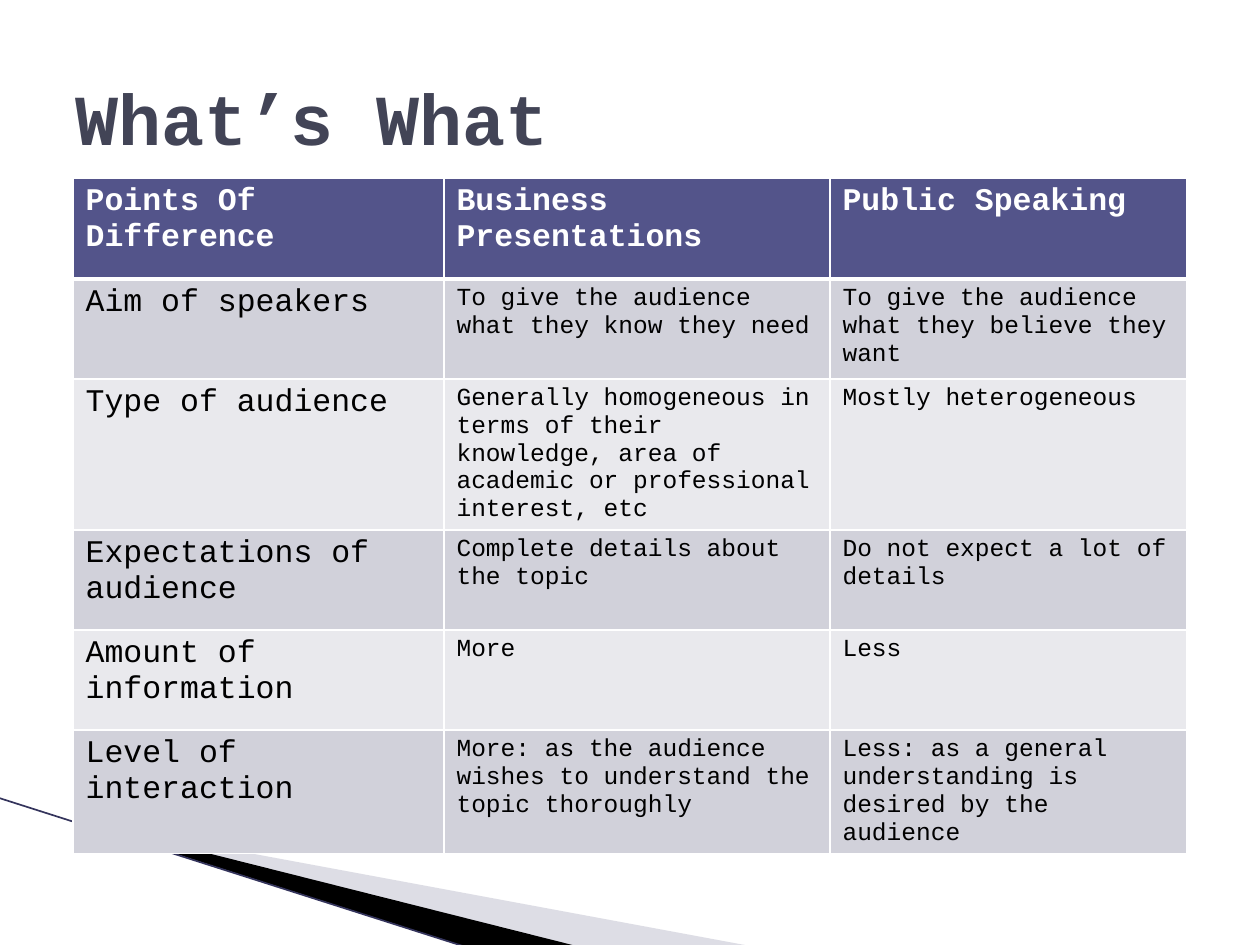
from lxml import etree
from pptx import Presentation
from pptx.dml.color import RGBColor
from pptx.enum.shapes import MSO_CONNECTOR
from pptx.enum.text import MSO_ANCHOR
from pptx.oxml.ns import qn
from pptx.util import Pt

PX = 914400 / 126
STRAIGHT = MSO_CONNECTOR.STRAIGHT
MIDDLE = MSO_ANCHOR.MIDDLE
FONT = "Courier New"
COLORS = {
    "title": "424456", "header": "53548A", "odd": "D1D1DA", "even": "E9E9ED",
    "white": "FFFFFF", "black": "000000", "wedge": "AAAABF", "edge": "34345C",
}


def px(length):
    return round(length * PX)


def rgb(name):
    return RGBColor.from_string(COLORS[name])


def write(frame, text, size=14, color="black", bold=False):
    frame.word_wrap = True
    paragraph = frame.paragraphs[0]
    run = paragraph.add_run()
    run.text = text
    run.font.name = FONT
    run.font.size = Pt(size)
    run.font.bold = bold
    run.font.color.rgb = rgb(color)


class SlideBuilder:
    def __init__(self, slide):
        self.slide = slide

    def wedge(self, frame, points, color, opacity=100):
        outline = self.slide.shapes.build_freeform(*points[0], scale=PX)
        outline.add_line_segments(points[1:], close=True)
        shape = outline.convert_to_shape()
        self.reframe(shape, frame, points)
        shape.shadow.inherit = False
        shape.fill.solid()
        shape.fill.fore_color.rgb = rgb(color)
        shape.line.fill.background()
        if opacity < 100:
            fill_color = shape.fill._xPr.find(qn("a:solidFill"))[0]
            etree.SubElement(fill_color, qn("a:alpha"), val=str(opacity * 1000))

    def reframe(self, shape, frame, points):
        """Give the shape a frame that its outline may reach beyond."""
        left, top, width, height = frame
        shape.left, shape.top, shape.width, shape.height = map(px, frame)
        track = next(shape._element.iter(qn("a:path")))
        track.set("w", str(width))
        track.set("h", str(height))
        for spot, (x, y) in zip(track.iter(qn("a:pt")), points):
            spot.set("x", str(x - left))
            spot.set("y", str(y - top))

    def line(self, start, end, color, width):
        connector = self.slide.shapes.add_connector(
            STRAIGHT, *map(px, start), *map(px, end))
        connector.line.color.rgb = rgb(color)
        connector.line.width = Pt(width)
        etree.SubElement(connector._element.spPr, qn("a:effectLst"))

    def title(self, left, top, width, height, text):
        box = self.slide.shapes.add_textbox(*map(px, (left, top, width, height)))
        box.text_frame.vertical_anchor = MIDDLE
        write(box.text_frame, text, size=41, color="title", bold=True)

    def borders(self, cell, **widths):
        properties = cell._tc.get_or_add_tcPr()
        for side in "LRTB":
            border = etree.SubElement(properties, qn(f"a:ln{side}"),
                                      w=str(Pt(widths.get(side, 1))))
            fill = etree.SubElement(border, qn("a:solidFill"))
            etree.SubElement(fill, qn("a:srgbClr"), val=COLORS["white"])

    def table(self, left, top, widths, heights, rows):
        table = self.slide.shapes.add_table(
            len(rows), len(widths),
            *map(px, (left, top, sum(widths), sum(heights)))).table
        for column, width in zip(table.columns, widths):
            column.width = px(width)
        for r, (row, height) in enumerate(zip(rows, heights)):
            table.rows[r].height = px(height)
            header = r == 0
            fill = "header" if header else "odd" if r % 2 else "even"
            for c, text in enumerate(row):
                cell = table.cell(r, c)
                self.borders(cell, T=3 if r == 1 else 1, B=3 if header else 1)
                cell.fill.solid()
                cell.fill.fore_color.rgb = rgb(fill)
                write(cell.text_frame, text,
                      size=18 if header or c == 0 else 14,
                      color="white" if header else "black", bold=header)


COMPARISON = [
    ("Points Of Difference", "Business Presentations", "Public Speaking"),
    ("Aim of speakers",
     "To give the audience what they know they need",
     "To give the audience what they believe they want"),
    ("Type of audience",
     "Generally homogeneous in terms of their knowledge, area of academic "
     "or professional interest, etc",
     "Mostly heterogeneous"),
    ("Expectations of audience",
     "Complete details about the topic",
     "Do not expect a lot of details"),
    ("Amount of information", "More", "Less"),
    ("Level of interaction",
     "More: as the audience wishes to understand the topic thoroughly",
     "Less: as a general understanding is desired by the audience"),
]


def main():
    deck = Presentation()
    deck.slide_width, deck.slide_height = px(1260), px(945)
    builder = SlideBuilder(deck.slides.add_slide(deck.slide_layouts[6]))

    # Corner decoration
    builder.wedge((98, 689, 524, 199),
                  [(76, 821), (750, 946), (575, 946), (76, 822)], "wedge", opacity=40)
    builder.wedge((-8, 798, 524, 116),
                  [(76, 820), (576, 946), (470, 948), (76, 822)], "black")
    builder.line((-1, 798), (469, 948), "edge", 0.95)

    # Comparison table
    builder.table(73, 178, [371, 386, 357], [101, 100, 130, 100, 100, 100], COMPARISON)

    # Title
    builder.title(63, 38, 1134, 157, "What’s What")

    deck.save("out.pptx")


if __name__ == "__main__":
    main()
